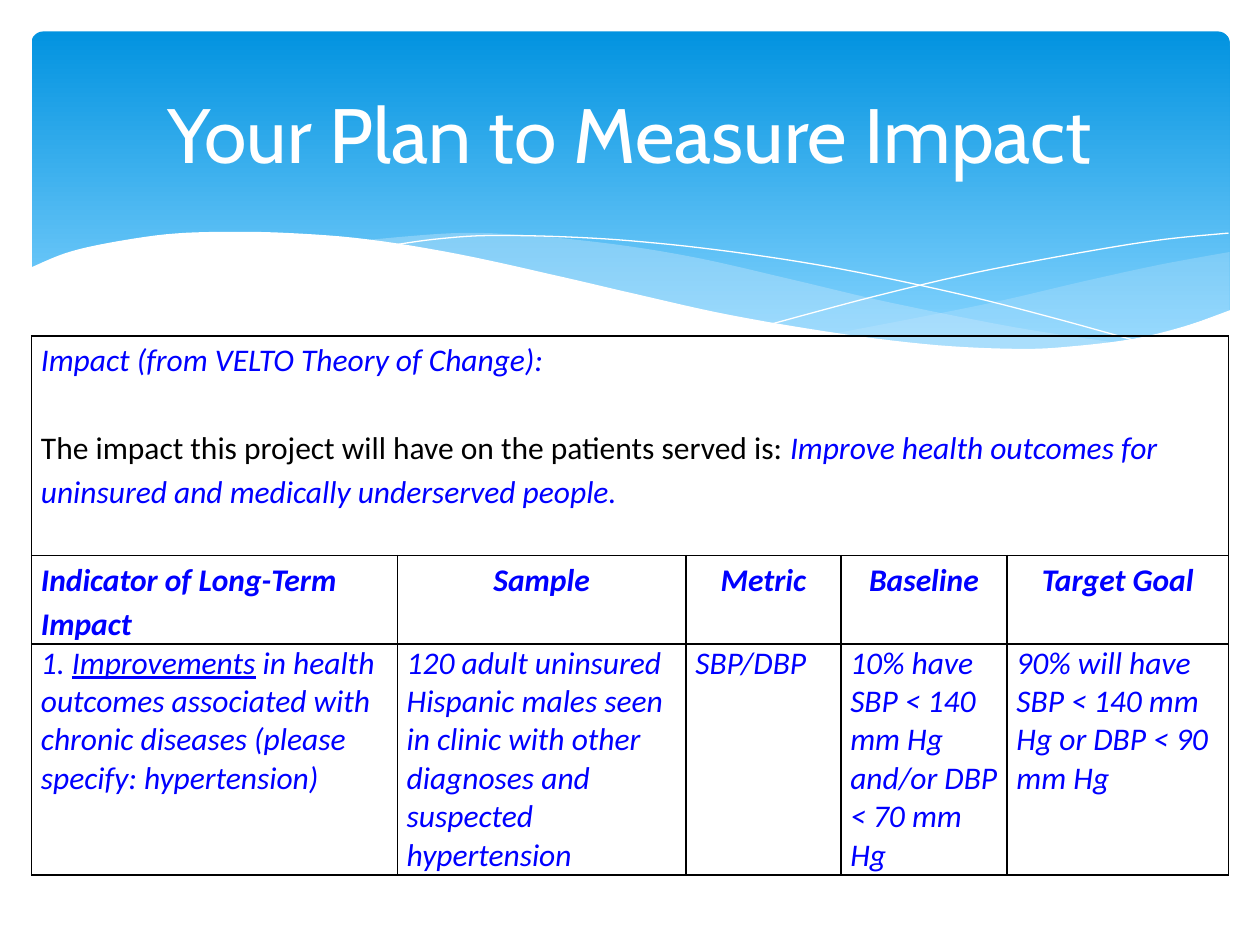
from dataclasses import dataclass
from typing import NamedTuple, Optional

from lxml import etree
from pptx import Presentation
from pptx.dml.color import RGBColor
from pptx.enum.shapes import MSO_SHAPE
from pptx.enum.text import MSO_ANCHOR, PP_ALIGN
from pptx.oxml.ns import qn
from pptx.util import Pt

ROUNDED = MSO_SHAPE.ROUNDED_RECTANGLE
MIDDLE = MSO_ANCHOR.MIDDLE
LEFT, CENTER = PP_ALIGN.LEFT, PP_ALIGN.CENTER


@dataclass(frozen=True)
class Theme:
    sky_top: str = "0293E0"
    sky_bottom: str = "83D3FE"
    ripple: str = "C6E7FC"
    white: str = "FFFFFF"
    ink: str = "000000"
    answer: str = "0000FF"
    title_font: str = "Cabin"
    body_font: str = "Calibri"
    title_size: float = 44
    body_size: float = 18
    border: float = 1


class Wave(NamedTuple):
    crest: tuple
    base: tuple = ()
    smooth_base: bool = True
    fill: Optional[str] = None
    opacity: int = 100


class Span(NamedTuple):
    text: str
    color: str
    italic: bool = True
    underline: bool = False


class Para(NamedTuple):
    spans: tuple
    bold: bool = False
    align: int = LEFT
    spacing: float = 1.0
    after: float = 0


THEME = Theme()
COLUMNS = (209, 165, 88.5, 95, 126.5)
ROWS = (125.5, 50, 132)
LOOSE = 1.15

WAVES = (
    Wave(((702.7, 144), (663, 151.2), (620, 160.6), (561, 174.2), (476, 190.8)),
         ((476, 190.8), (517.7, 195.8), (553.7, 199.4), (586, 200.2),
          (621.4, 198), (657.4, 192.2), (702.7, 177.8)),
         fill=THEME.ripple, opacity=29),
    Wave(((643, 196.6), (581, 187.2), (508.3, 172.8), (452.9, 159.8), (399.6, 147.6),
          (352, 139.7), (302.4, 134.6), (260, 133.2), (206, 137.5)),
         ((206, 137.5), (260.6, 146.2), (323.3, 159.8), (381.6, 172.8), (445, 185.8),
          (500.4, 194.4), (548, 199.4), (589, 200.2), (617, 199.4), (643, 196.6)),
         fill=THEME.ripple, opacity=40),
    Wave(((222.5, 140.4), (247.7, 136.8), (278.6, 134.6), (324, 135.4), (367.2, 138.2),
          (419, 144), (478.8, 153.4), (547.2, 167.8), (598.3, 180.7), (653, 195.8))),
    Wave(((441.4, 185), (500.4, 169.2), (558.7, 155.5), (623.5, 143.3),
          (665.3, 136.8), (702, 133.2))),
    Wave(((703.4, 177.1), (676.8, 186.5), (647.3, 193.7), (612, 198), (582.5, 199.4),
          (535.7, 197.3), (481, 190.8), (416.9, 180), (362.2, 167.8), (321.8, 158.4),
          (262.8, 145.4), (210.2, 136.8), (165.6, 133.2), (127.4, 132.5), (95, 133.9),
          (61.2, 139), (37.4, 144.7), (16.6, 153.4)),
         ((16.6, 236.9), (703.4, 236.9)), smooth_base=False, fill=THEME.white),
)


def answer(text: str, **options) -> Para:
    return Para((Span(text, THEME.answer),), **options)


def heading(text: str, align: int = CENTER) -> Para:
    return answer(text, bold=True, align=align, spacing=LOOSE)


IMPACT = (
    answer("Impact (from VELTO Theory of Change):", spacing=LOOSE, after=25),
    Para((Span("The impact this project will have on the patients served is: ",
               THEME.ink, italic=False),
          Span("Improve health outcomes for uninsured and medically underserved people.",
               THEME.answer)), spacing=LOOSE),
)
HEADINGS = (heading("Indicator of Long-Term Impact", LEFT),
            *map(heading, ("Sample", "Metric", "Baseline", "Target Goal")))
INDICATOR = (
    Para((Span("1. ", THEME.answer),
          Span("Improvements", THEME.answer, underline=True),
          Span(" in health outcomes associated with chronic diseases "
               "(please specify: hypertension)", THEME.answer))),
    answer("120 adult uninsured Hispanic males seen in clinic with other "
           "diagnoses and suspected hypertension"),
    answer("SBP/DBP"),
    answer("10% have SBP < 140 mm Hg and/or DBP < 70 mm Hg"),
    answer("90% will have SBP < 140 mm Hg or DBP < 90 mm Hg"),
)


def rgb(color: str) -> RGBColor:
    return RGBColor.from_string(color)


def smooth(points: tuple, steps: int = 6) -> list:
    padded = (points[0], *points, points[-1])
    curve = [points[0]]
    for a, b, c, d in zip(padded, padded[1:], padded[2:], padded[3:]):
        for t in (i / steps for i in range(1, steps + 1)):
            curve.append(tuple(
                q + t / 2 * (r - p + t * (2 * p - 5 * q + 4 * r - s
                                          + t * (3 * q - p - 3 * r + s)))
                for p, q, r, s in zip(a, b, c, d)))
    return curve


def draw_sky(slide) -> None:
    sp = slide.shapes.add_shape(ROUNDED, Pt(18), Pt(18), Pt(684.7), Pt(194.4))
    sp.adjustments[0] = 0.034
    sp.shadow.inherit = False
    sp.line.fill.background()
    sp.fill.gradient()
    sp.fill.gradient_angle = 270
    stops = zip(sp.fill.gradient_stops, (THEME.sky_top, THEME.sky_bottom), (0, 0.9))
    for stop, color, position in stops:
        stop.color.rgb = rgb(color)
        stop.position = position


def draw_wave(slide, wave: Wave) -> None:
    base = smooth(wave.base) if wave.base and wave.smooth_base else list(wave.base)
    points = [(Pt(x), Pt(y)) for x, y in smooth(wave.crest) + base]
    builder = slide.shapes.build_freeform(*points[0])
    builder.add_line_segments(points[1:], close=wave.fill is not None)
    sp = builder.convert_to_shape()
    sp.shadow.inherit = False
    if wave.fill is None:
        sp.fill.background()
        sp.line.color.rgb = rgb(THEME.white)
        sp.line.width = Pt(0)
        return
    sp.line.fill.background()
    sp.fill.solid()
    sp.fill.fore_color.rgb = rgb(wave.fill)
    if wave.opacity < 100:
        color = sp.fill._xPr.find(".//" + qn("a:srgbClr"))
        etree.SubElement(color, qn("a:alpha"), val=str(wave.opacity * 1000))


def draw_title(slide, text: str) -> None:
    sp = slide.shapes.title
    sp._element.getparent().append(sp._element)
    sp.left, sp.top, sp.width, sp.height = Pt(36), Pt(26.5), Pt(648), Pt(99)
    tf = sp.text_frame
    tf.text = text
    tf.vertical_anchor = MIDDLE
    p = tf.paragraphs[0]
    p.alignment = CENTER
    p.font.name, p.font.size = THEME.title_font, Pt(THEME.title_size)
    p.font.color.rgb = rgb(THEME.white)


def draw_borders(cell) -> None:
    tc_pr = cell._tc.get_or_add_tcPr()
    for i, side in enumerate(("lnL", "lnR", "lnT", "lnB")):
        ln = etree.Element(qn(f"a:{side}"), w=str(Pt(THEME.border)))
        fill = etree.SubElement(ln, qn("a:solidFill"))
        etree.SubElement(fill, qn("a:srgbClr"), val=THEME.ink)
        tc_pr.insert(i, ln)


def fill_cell(cell, paras: tuple) -> None:
    cell.margin_left = cell.margin_right = Pt(5.4)
    cell.margin_top = cell.margin_bottom = 0
    tf = cell.text_frame
    for i, para in enumerate(paras):
        p = tf.add_paragraph() if i else tf.paragraphs[0]
        p.alignment, p.line_spacing = para.align, para.spacing
        p.space_after = Pt(para.after)
        p.font.name, p.font.size = THEME.body_font, Pt(THEME.body_size)
        p.font.bold = para.bold
        for span in para.spans:
            r = p.add_run()
            r.text = span.text
            r.font.italic, r.font.underline = span.italic, span.underline
            r.font.color.rgb = rgb(span.color)


def draw_impact_table(slide) -> None:
    table = slide.shapes.add_table(len(ROWS), len(COLUMNS), Pt(18), Pt(192),
                                   Pt(sum(COLUMNS)), Pt(sum(ROWS))).table
    table.first_row = table.horz_banding = False
    for column, width in zip(table.columns, COLUMNS):
        column.width = Pt(width)
    for row, height in zip(table.rows, ROWS):
        row.height = Pt(height)
    for cell in table.iter_cells():
        cell.fill.background()
        draw_borders(cell)
    table.cell(0, 0).merge(table.cell(0, len(COLUMNS) - 1))
    fill_cell(table.cell(0, 0), IMPACT)
    for i, paras in enumerate((HEADINGS, INDICATOR), start=1):
        for j, para in enumerate(paras):
            fill_cell(table.cell(i, j), (para,))


def main() -> None:
    prs = Presentation()
    prs.slide_width, prs.slide_height = Pt(720), Pt(540)
    slide = prs.slides.add_slide(prs.slide_layouts[5])
    draw_sky(slide)
    for wave in WAVES:
        draw_wave(slide, wave)
    draw_title(slide, "Your Plan to Measure Impact")
    draw_impact_table(slide)
    prs.save("out.pptx")


if __name__ == "__main__":
    main()
